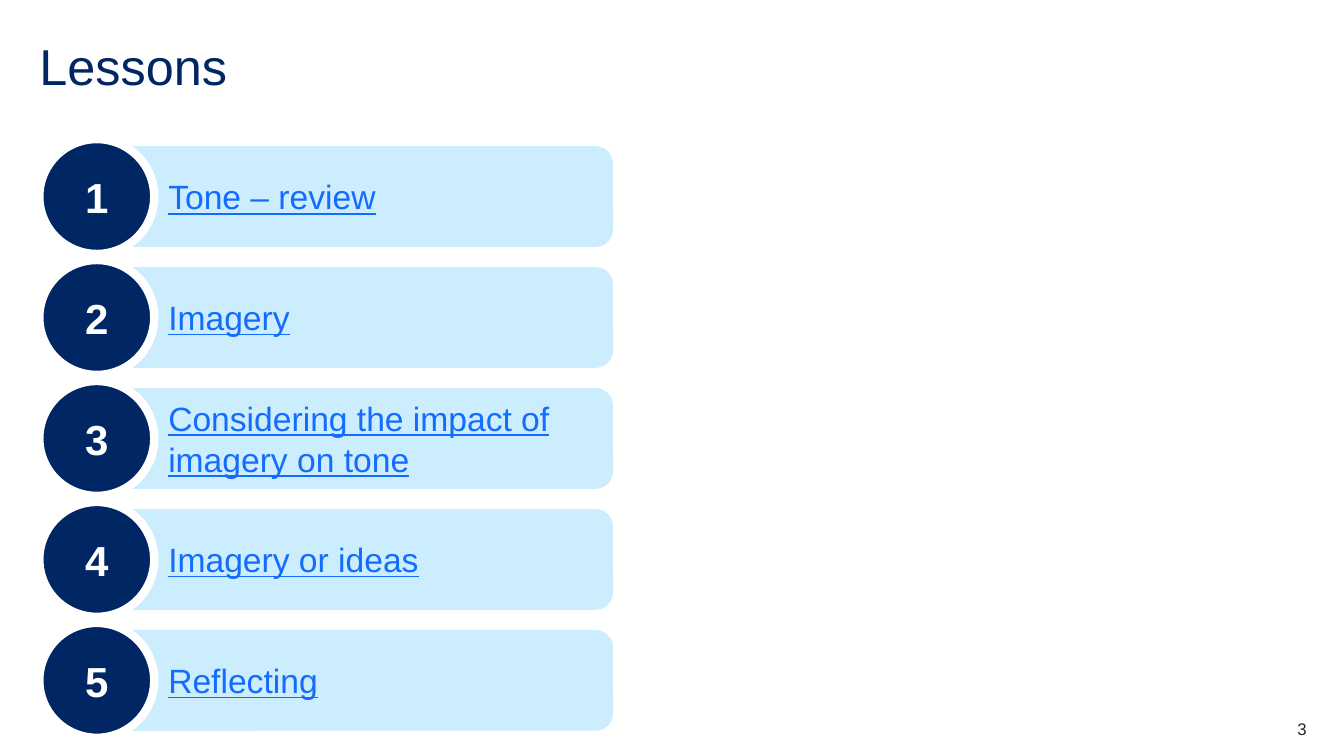
from dataclasses import dataclass

import pptx
import pptx.dml.color
import pptx.enum.shapes
import pptx.enum.text
import pptx.util

Inches = pptx.util.Inches
Shape = pptx.enum.shapes.MSO_SHAPE
Align = pptx.enum.text.PP_ALIGN
Anchor = pptx.enum.text.MSO_ANCHOR


@dataclass(frozen=True)
class Theme:
    font: str = "Arial"
    navy: str = "002664"
    pale_blue: str = "CBEDFD"
    link_blue: str = "146CFD"
    white: str = "FFFFFF"
    dark_grey: str = "22272B"
    title_size: int = 36
    number_size: int = 30
    lesson_size: int = 24
    footer_size: int = 12


THEME = Theme()
LESSONS = [
    "Tone – review",
    "Imagery",
    "Considering the impact of imagery on tone",
    "Imagery or ideas",
    "Reflecting",
]
MARGIN = 0.39
FIRST_TOP = 1.45
PITCH = 1.2
BAR_LEFT, BAR_WIDTH, BAR_HEIGHT = 1.13, 4.95, 1
CIRCLE_SIZE = 1.14


def rgb(value):
    return pptx.dml.color.RGBColor.from_string(value)


def write(shape, text, size, color, align=Align.LEFT, anchor=Anchor.MIDDLE,
          bold=False, underline=False):
    """Put one run of text in the shape and return its paragraph."""
    frame = shape.text_frame
    frame.word_wrap = True
    frame.vertical_anchor = anchor
    para = frame.paragraphs[0]
    para.alignment = align
    span = para.add_run()
    span.text = text
    span.font.name = THEME.font
    span.font.size = pptx.util.Pt(size)
    span.font.color.rgb = rgb(color)
    span.font.bold = bold
    span.font.underline = underline
    return para


def add_text(page, place, *args, **options):
    box = page.shapes.add_textbox(*map(Inches, place))
    frame = box.text_frame
    frame.margin_left = frame.margin_right = 0
    frame.margin_top = frame.margin_bottom = 0
    return write(box, *args, **options)


def add_filled(shapes, kind, place, fill):
    shape = shapes.add_shape(kind, *map(Inches, place))
    shape.shadow.inherit = False
    shape.fill.solid()
    shape.fill.fore_color.rgb = rgb(fill)
    shape.line.fill.background()
    return shape


def add_lesson(page, number, lesson):
    """Add a lesson bar with its numbered circle as one group."""
    top = FIRST_TOP + (number - 1) * PITCH
    shapes = page.shapes.add_group_shape().shapes

    bar = add_filled(shapes, Shape.ROUNDED_RECTANGLE,
                     (BAR_LEFT, top, BAR_WIDTH, BAR_HEIGHT), THEME.pale_blue)
    bar.adjustments[0] = 0.173
    para = write(bar, lesson, THEME.lesson_size, THEME.link_blue, underline=True)
    para._p.get_or_add_pPr().set("marL", str(Inches(MARGIN)))

    circle_top = top + (BAR_HEIGHT - CIRCLE_SIZE) / 2
    circle = add_filled(shapes, Shape.OVAL,
                        (MARGIN, circle_top, CIRCLE_SIZE, CIRCLE_SIZE), THEME.navy)
    circle.line.color.rgb = rgb(THEME.white)
    circle.line.width = pptx.util.Pt(6)
    write(circle, str(number), THEME.number_size, THEME.white,
          align=Align.CENTER, bold=True)


def main():
    deck = pptx.Presentation()
    deck.slide_width, deck.slide_height = Inches(13.33), Inches(7.5)
    page = deck.slides.add_slide(deck.slide_layouts[6])

    title = add_text(page, (MARGIN, 0.39, 12.56, 0.6), "Lessons",
                     THEME.title_size, THEME.navy)
    title.line_spacing = 0.9
    for number, lesson in enumerate(LESSONS, start=1):
        add_lesson(page, number, lesson)
    add_text(page, (12.17, 7.13, 0.79, 0.2), "3", THEME.footer_size,
             THEME.dark_grey, align=Align.RIGHT, anchor=Anchor.BOTTOM)

    deck.save("out.pptx")


if __name__ == "__main__":
    main()
